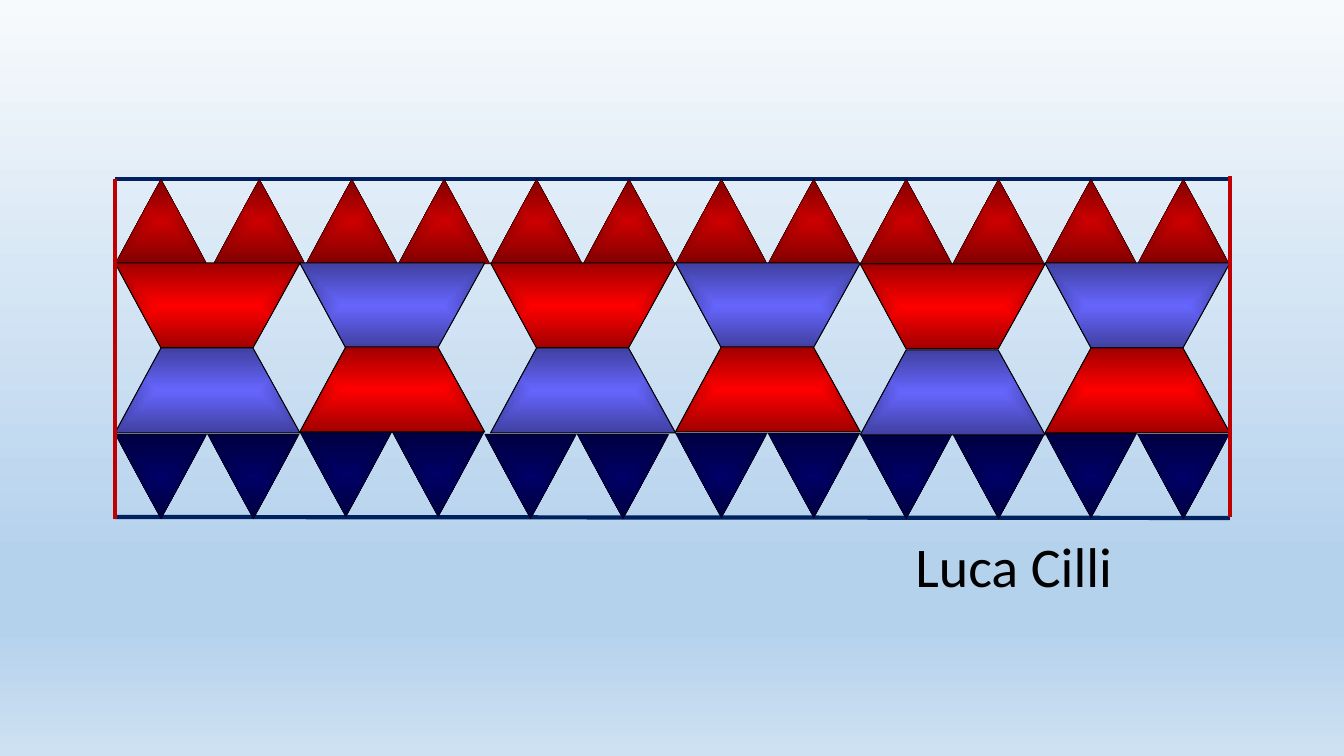
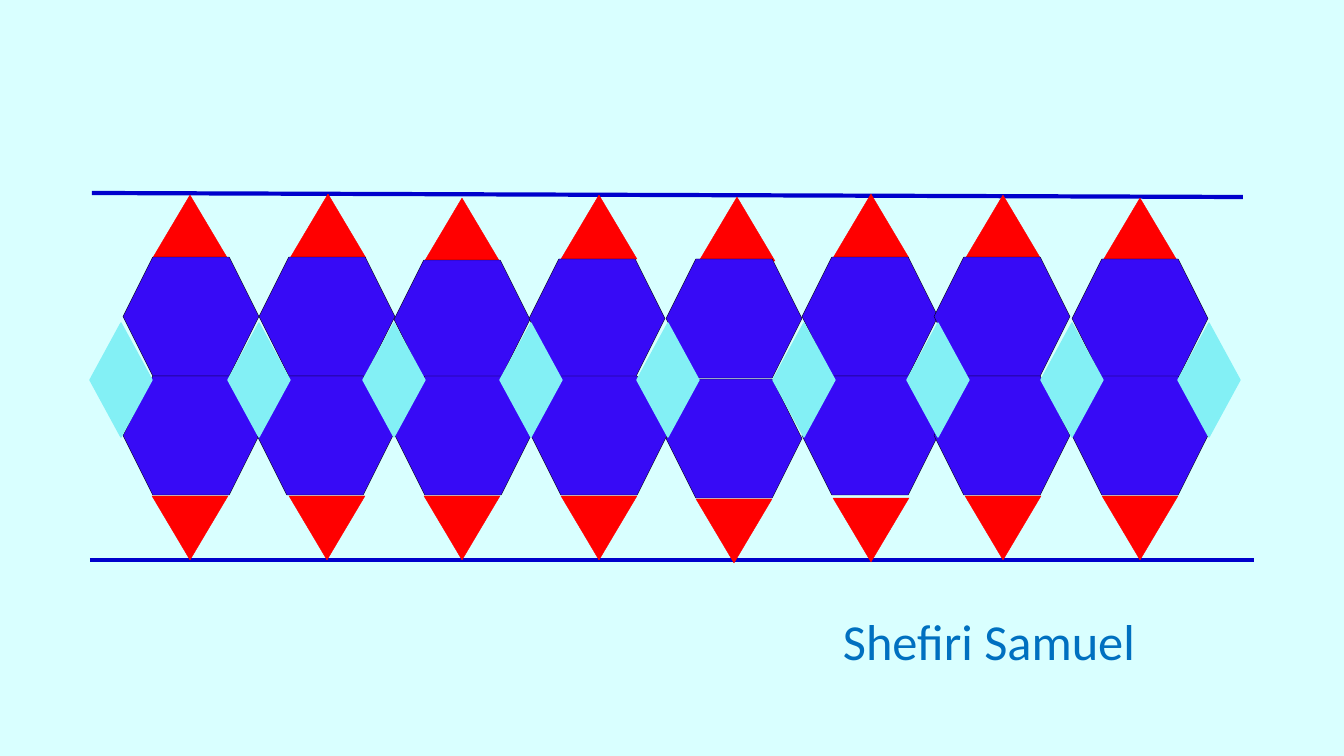
from lxml import etree
from pptx import Presentation
from pptx.dml.color import RGBColor
from pptx.enum.shapes import MSO_CONNECTOR as Link, MSO_SHAPE as Form
from pptx.enum.text import MSO_ANCHOR as Anchor, PP_ALIGN as Align
from pptx.oxml.ns import qn
from pptx.util import Pt

# Size: lengths are px, 1344 across the slide
WIDE, HIGH = 1344, 756
UNIT = 12192000 / WIDE

# Colours: each pair runs from centre to edge
RED = ("FF0000", "A00000")
BLUE = ("6666FF", "4040A0")
DARK = ("CC0000", "800000")
NAVY = ("000066", "000040")
BLACK = "000000"
SKY = [(0, "F7FAFD"), (74, "B5D2EC"), (83, "B5D2EC"), (100, "CEE1F2")]

# Slide 1: a gap of 6 px opens in each row from one item on
LEFT, STEP, GAP = 115, 92.4, 6
TOOTH = (92, 85)
TEETH = [  # colours, turn, first item after the gap, tops
    (NAVY, 180, 6, [434, 434, 432, 432, 434, 434,
                    433, 433, 434, 434, 433, 434]),
    (DARK, 0, 1, [179] * 12),
]
CUPS = [  # colour order, wide edge, tops
    ((RED, BLUE), "top", [263, 263, 263, 263, 264, 263]),
    ((BLUE, RED), "foot", [348, 347, 348, 347, 350, 348]),
]
EDGES = [(115, 517, 1230, 518), (115, 179, 1230, 179)]
SIDES = [(115, 179, 115, 519), (1230, 176, 1230, 517)]

# Slide 2: rows of (form, fill, line, line width, turn, size, lefts, tops)
RULES = [(92, 193, 1243, 197), (90, 560, 1254, 560)]
ROWS = [
    (Form.ISOSCELES_TRIANGLE, "FF0000", "FF0000", 0.25, 0, (76, 64),
     [152, 290, 424, 561, 699, 833, 965, 1102],
     [195, 194, 198, 195, 197, 194, 195, 198]),
    (Form.HEXAGON, "370AF6", BLACK, 0.25, 0, (136, 119),
     [123, 259, 394, 529, 666, 802, 934, 1072],
     [257, 257, 260, 259, 259, 257, 257, 259]),
    (Form.HEXAGON, "370AF6", BLACK, 0.25, 0, (136, 119),
     [123, 257, 395, 531, 666, 802, 934, 1072],
     [376, 376, 376, 376, 379, 376, 376, 376]),
    (Form.ISOSCELES_TRIANGLE, "FF0000", "FF0000", 0.25, 180, (76, 64),
     [152, 289, 424, 561, 696, 833, 965, 1102],
     [496, 496, 496, 496, 499, 498, 496, 496]),
    (Form.DIAMOND, "83F0F5", "83F0F5", 1, 0, (62, 114),
     [90, 228, 363, 500, 637, 773, 907, 1041, 1178], [323] * 9),
]

# Names: text, box, size, colour, side
NAMES = [
    ("Luca Cilli", (528, 527, 594, 80), 40, BLACK, Align.RIGHT),
    ("Shefiri Samuel", (833, 605, 335, 72), 36, "0070C0", Align.LEFT),
]


# Helpers
def px(*vals):
    return [round(v * UNIT) for v in vals]


def hue(text):
    return RGBColor.from_string(text)


def style(item, vals):
    for name, val in vals.items():
        setattr(item, name, val)


def stroke(item, tone, width):
    item.line.color.rgb = hue(tone)
    item.line.width = Pt(width)


def blend(fill, root, stops, angle=None):
    """Linear blend at an angle, or from the centre when there is none."""
    fill.gradient()
    grad = next(root.iter(qn("a:gradFill")))
    for part in list(grad):
        grad.remove(part)
    group = etree.SubElement(grad, qn("a:gsLst"))
    for pos, tone in stops:
        stop = etree.SubElement(group, qn("a:gs"), pos=str(pos * 1000))
        etree.SubElement(stop, qn("a:srgbClr"), val=tone)
    if angle is None:
        way = etree.SubElement(grad, qn("a:path"), path="shape")
        etree.SubElement(way, qn("a:fillToRect"),
                         dict.fromkeys("ltrb", "50000"))
    else:
        etree.SubElement(grad, qn("a:lin"), ang=str(angle * 60000),
                         scaled="0")


def paint(item, fill, tone, width):
    item.shadow.inherit = False
    if isinstance(fill, str):
        item.fill.solid()
        item.fill.fore_color.rgb = hue(fill)
    else:
        blend(item.fill, item.element, zip((0, 100), fill))
    stroke(item, tone, width)


def shape(slide, form, box, turn, *look):
    item = slide.shapes.add_shape(form, *px(*box))
    item.rotation = turn
    paint(item, *look)


def cup(slide, x, y, wide, fill):
    pts = [(x, y), (x + 46, y + 85), (x + 138, y + 85), (x + 185, y)]
    if wide == "foot":
        pts = [(a, 2 * y + 85 - b) for a, b in pts]
    pen = slide.shapes.build_freeform(*px(*pts[0]))
    pen.add_line_segments([px(*p) for p in pts[1:]], close=True)
    paint(pen.convert_to_shape(), fill, BLACK, 0.75)


def rules(slide, lines, tone):
    for ends in lines:
        item = slide.shapes.add_connector(Link.STRAIGHT, *px(*ends))
        stroke(item, tone, 3)
        etree.SubElement(item.element.spPr, qn("a:effectLst"))


def label(slide, text, box, size, tone, side):
    frame = slide.shapes.add_textbox(*px(*box)).text_frame
    style(frame, {"word_wrap": True, "vertical_anchor": Anchor.TOP})
    para = frame.paragraphs[0]
    para.alignment = side
    run = para.add_run()
    run.text = text
    style(run.font, {"name": "Calibri", "size": Pt(size)})
    run.font.color.rgb = hue(tone)


def spot(num, start, step):
    return LEFT + num * step + (GAP if num >= start else 0)


# Slides
def first(slide):
    blend(slide.background.fill, slide.element, SKY, 90)
    rules(slide, EDGES, "002060")
    for fill, turn, start, tops in TEETH:
        for num, top in enumerate(tops):
            box = (spot(num, start, STEP), top, *TOOTH)
            shape(slide, Form.ISOSCELES_TRIANGLE, box, turn,
                  fill, BLACK, 0.25)
    for fills, wide, tops in CUPS:
        for num, top in enumerate(tops):
            cup(slide, spot(num, 2, 2 * STEP), top, wide, fills[num % 2])
    rules(slide, SIDES, "C00000")


def second(slide):
    fill = slide.background.fill
    fill.solid()
    fill.fore_color.rgb = hue("D9FFFF")
    rules(slide, RULES, "0000CC")
    for form, tint, tone, width, turn, size, lefts, tops in ROWS:
        for spots in zip(lefts, tops):
            shape(slide, form, (*spots, *size), turn, tint, tone, width)


def main():
    deck = Presentation()
    deck.slide_width, deck.slide_height = px(WIDE, HIGH)
    for draw, name in zip((first, second), NAMES):
        slide = deck.slides.add_slide(deck.slide_layouts[6])
        draw(slide)
        label(slide, *name)
    deck.save("out.pptx")


if __name__ == "__main__":
    main()
